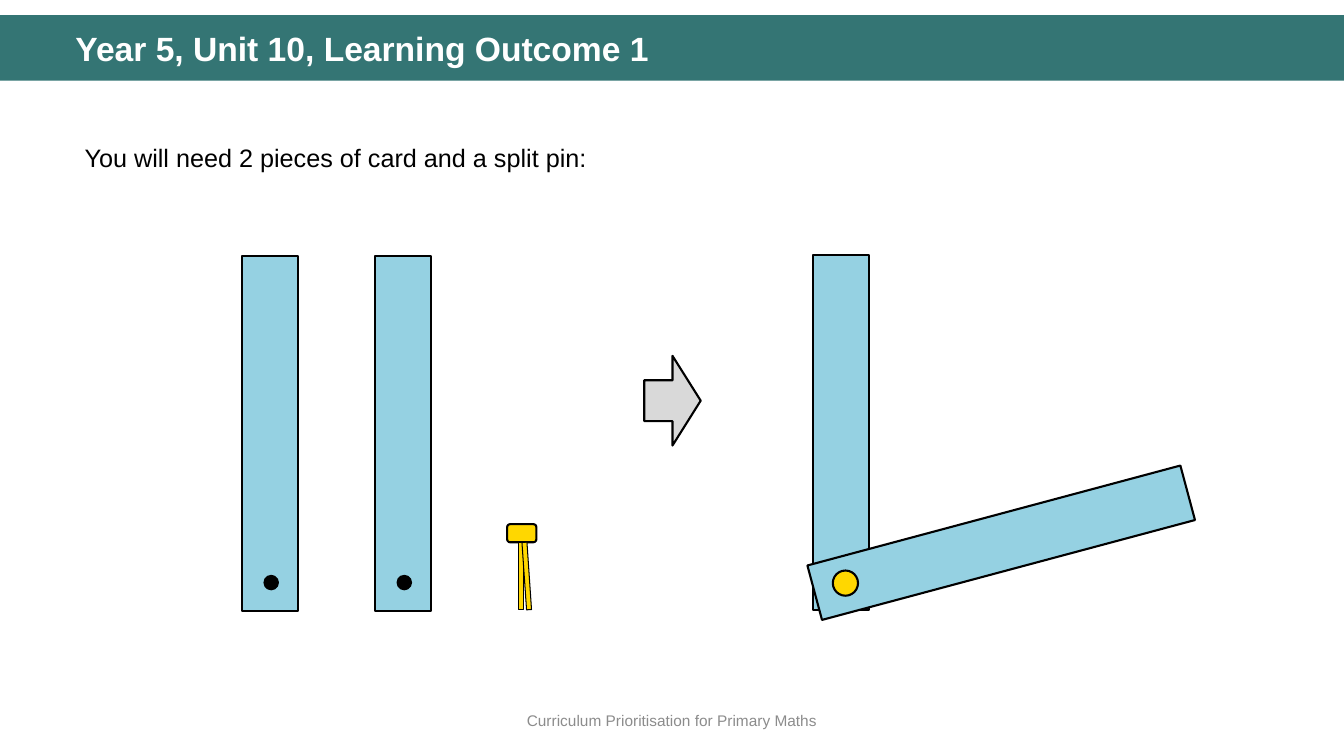
from dataclasses import dataclass

from pptx import Presentation
from pptx import util as u
from pptx.dml.color import RGBColor
from pptx.enum import shapes, text

PX = 9144  # EMU per px, 100 px to the inch
WIDE, HIGH = 1333, 750
BLACK, WHITE, GREY = "000000", "FFFFFF", "8C8C8C"
TEAL, BLUE, GOLD, SILVER = "347574", "95D1E2", "FFD700", "D9D9D9"
Kind = shapes.MSO_SHAPE
Align = text.PP_ALIGN
Anchor = text.MSO_ANCHOR


@dataclass
class Part:
    left: int
    top: int
    width: int
    height: int
    fill: str
    kind: Kind = Kind.RECTANGLE
    line: float = 1.5
    turn: float = 0
    adjust: tuple[float, ...] = ()


@dataclass
class Label:
    left: int
    top: int
    width: int
    height: int
    words: str
    size: int
    color: str
    bold: bool = False
    align: Align = Align.LEFT
    anchor: Anchor = Anchor.TOP
    spacing: float = 1.0


def rgb(code: str) -> RGBColor:
    return RGBColor.from_string(code)


def box(item: Part | Label) -> list[u.Emu]:
    """Give left, top, width and height in EMU."""
    return [u.Emu(n * PX) for n in (item.left, item.top, item.width, item.height)]


def draw_part(slide, part: Part) -> None:
    shape = slide.shapes.add_shape(part.kind, *box(part))
    shape.shadow.inherit = False
    shape.rotation = part.turn
    for i, value in enumerate(part.adjust):
        shape.adjustments[i] = value
    shape.fill.solid()
    shape.fill.fore_color.rgb = rgb(part.fill)
    if part.line:
        shape.line.color.rgb = rgb(BLACK)
        shape.line.width = u.Pt(part.line)
    else:
        shape.line.fill.background()


def draw_label(slide, label: Label) -> None:
    frame = slide.shapes.add_textbox(*box(label)).text_frame
    frame.word_wrap = True
    frame.vertical_anchor = label.anchor
    para = frame.paragraphs[0]
    para.text = label.words
    para.alignment = label.align
    para.line_spacing = label.spacing
    para.font.name = "Arial"
    para.font.size = u.Pt(label.size)
    para.font.bold = label.bold
    para.font.color.rgb = rgb(label.color)


def card(left: int, top: int) -> Part:
    return Part(left, top, 56, 352, BLUE)


def hole(left: int) -> Part:
    """Mark the pin hole of the card that starts at left."""
    return Part(left + 22, 571, 14, 14, BLACK, Kind.OVAL, 1)


def leg(left: int, turn: float = 0) -> Part:
    return Part(left, 538, 5, 67, GOLD, line=0.75, turn=turn)


CARDS = (240, 372)
BAND = Part(0, 15, WIDE, 65, TEAL, line=0)
JOINED = [
    card(806, 253),
    Part(965, 347, 56, 383, BLUE, turn=75),
    Part(826, 566, 25, 25, GOLD, Kind.OVAL),
]
PIN = [Part(503, 520, 29, 18, GOLD, Kind.ROUNDED_RECTANGLE), leg(514), leg(520, 356.1)]
LOOSE = [card(left, 254) for left in CARDS] + [hole(left) for left in CARDS]
ARROW = Part(639, 353, 56, 89, SILVER, Kind.RIGHT_ARROW, adjust=(0.455, 0.5))
LABELS = [
    Label(65, 27, 1232, 47, "Year 5, Unit 10, Learning Outcome 1", 24, WHITE,
          bold=True, spacing=0.9),
    Label(74, 136, 571, 40, "You will need 2 pieces of card and a split pin:", 18, BLACK),
    Label(0, 695, WIDE, 40, "Curriculum Prioritisation for Primary Maths", 11, GREY,
          align=Align.CENTER, anchor=Anchor.MIDDLE),
]


def main() -> None:
    deck = Presentation()
    deck.slide_width, deck.slide_height = u.Emu(WIDE * PX), u.Emu(HIGH * PX)
    slide = deck.slides.add_slide(deck.slide_layouts[6])
    for part in [BAND, *JOINED, *PIN, *LOOSE, ARROW]:
        draw_part(slide, part)
    for label in LABELS:
        draw_label(slide, label)
    deck.save("out.pptx")


if __name__ == "__main__":
    main()
